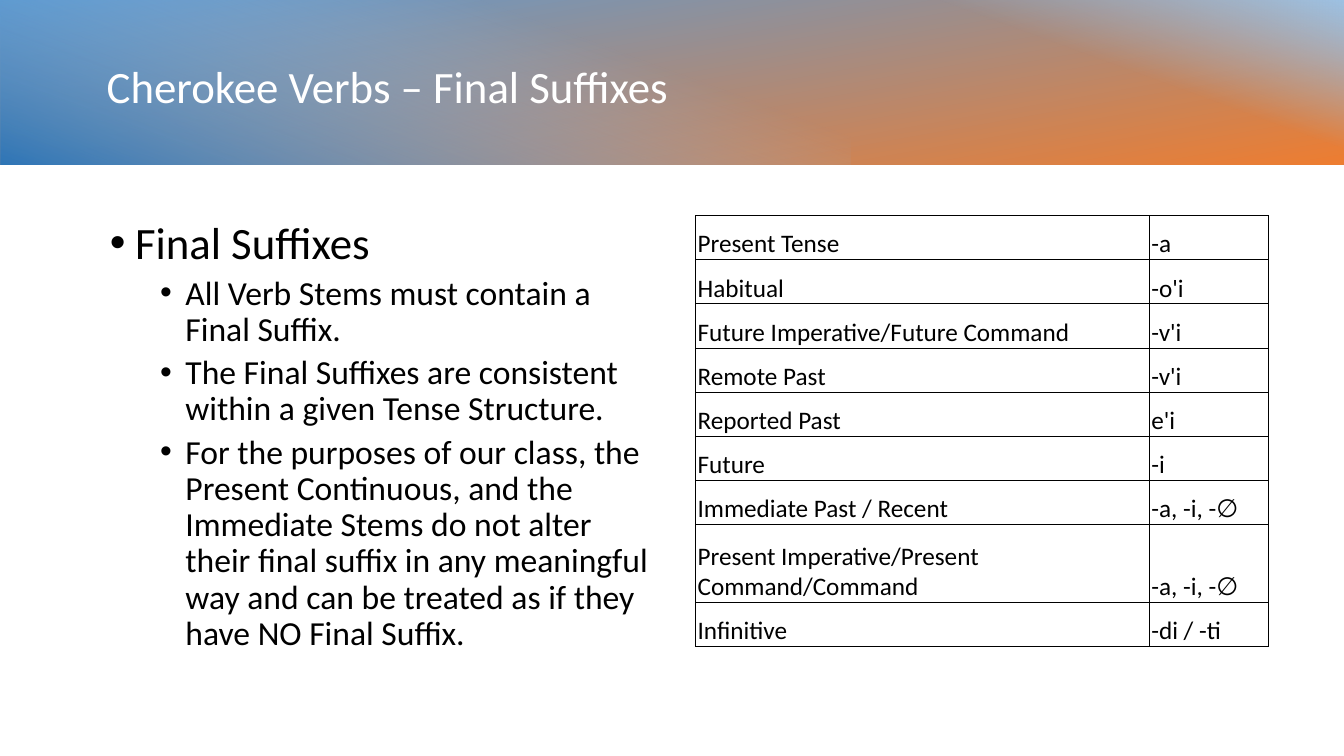
from dataclasses import dataclass

from lxml.etree import SubElement as Sub
from pptx import Presentation
from pptx.dml.color import RGBColor as RGB
from pptx.enum.shapes import MSO_SHAPE as SHAPE
from pptx.enum.text import MSO_ANCHOR as ANCHOR
from pptx.oxml.ns import qn
from pptx.util import Inches, Pt


@dataclass(frozen=True)
class Theme:
    font: str = "Calibri"
    blue: str = "5B9BD5"
    orange: str = "ED7D31"
    light: str = "9DC3E6"
    dark: str = "2E75B6"
    white: str = "FFFFFF"
    black: str = "000000"
    head: int = 32
    body: int = 24
    cell: int = 18
    rule: float = 0.5


class Deck:
    """Places elements on a grid of 100 columns by 100 rows."""

    def __init__(self, theme):
        self.theme = theme
        self.prs = Presentation()
        self.prs.slide_width = Inches(13.33)
        self.prs.slide_height = Inches(7.5)
        self.slide = self.prs.slides.add_slide(self.prs.slide_layouts[6])

    def col(self, n):
        return int(self.prs.slide_width * n / 100)

    def row(self, n):
        return int(self.prs.slide_height * n / 100)

    def area(self, left, top, wide, high):
        return self.col(left), self.row(top), self.col(wide), self.row(high)

    def style(self, para, size, color):
        for run in para.runs:
            run.font.name = self.theme.font
            run.font.size = Pt(size)
            run.font.color.rgb = RGB.from_string(color)

    def band(self, box, turn, angle, stops):
        """Turned rectangle that covers box; stops are (percent, color, alpha)."""
        x, y, w, h = self.area(*box)
        shape = self.slide.shapes.add_shape(
            SHAPE.RECTANGLE, x + (w - h) // 2, y + (h - w) // 2, h, w)
        shape.rotation = turn
        shape.shadow.inherit = False
        shape.line.fill.background()
        shape.fill.gradient()
        grad = shape.fill._xPr.find(qn("a:gradFill"))
        for child in list(grad):
            grad.remove(child)
        grad.set("rotWithShape", "1")
        group = Sub(grad, qn("a:gsLst"))
        for place, color, alpha in stops:
            stop = Sub(group, qn("a:gs"), pos=str(place * 1000))
            tint = Sub(stop, qn("a:srgbClr"), val=color)
            if alpha < 100:
                Sub(tint, qn("a:alpha"), val=str(alpha * 1000))
        Sub(grad, qn("a:lin"), ang=str(angle * 60000), scaled="0")

    def text(self, box, lines, color, anchor=ANCHOR.TOP):
        """Lines are (words, size, bullet indent in inches or None)."""
        frame = self.slide.shapes.add_textbox(*self.area(*box)).text_frame
        frame.word_wrap = True
        frame.vertical_anchor = anchor
        frame.text = "\n".join(line[0] for line in lines)
        for para, (_, size, indent) in zip(frame.paragraphs, lines):
            para.line_spacing = 0.9
            self.style(para, size, color)
            if indent is not None:
                para.space_before = Pt(5)
                props = para._p.get_or_add_pPr()
                props.set("marL", str(Inches(indent)))
                props.set("indent", str(Inches(-0.25)))
                Sub(props, qn("a:buFont"), typeface="Arial")
                Sub(props, qn("a:buChar"), char="•")

    def border(self, cell):
        props = cell._tc.get_or_add_tcPr()
        for spot, side in enumerate(("lnL", "lnR", "lnT", "lnB")):
            line = props.makeelement(
                qn("a:" + side), {"w": str(Pt(self.theme.rule))})
            props.insert(spot, line)
            fill = Sub(line, qn("a:solidFill"))
            Sub(fill, qn("a:srgbClr"), val=self.theme.black)

    def table(self, left, top, cols, rows, data):
        box = self.area(left, top, sum(cols), sum(rows))
        grid = self.slide.shapes.add_table(len(rows), len(cols), *box).table
        grid.first_row = grid.horz_banding = False
        for column, size in zip(grid.columns, cols):
            column.width = self.col(size)
        for line, size, words in zip(grid.rows, rows, data):
            line.height = self.row(size)
            for cell, word in zip(line.cells, words):
                cell.fill.background()
                cell.vertical_anchor = ANCHOR.BOTTOM
                cell.margin_left = cell.margin_right = Inches(0.02)
                cell.margin_top, cell.margin_bottom = Inches(0.02), 0
                cell.text_frame.text = word
                self.style(cell.text_frame.paragraphs[0],
                           self.theme.cell, self.theme.black)
                self.border(cell)

    def save(self):
        self.prs.save("out.pptx")


def main():
    look = Theme()
    deck = Deck(look)

    # Header band: base blend, light right corner, dark left corner
    top, high = -0.4, 22.1
    deck.band((0, top, 100, high), 270, 170,
              [(0, look.blue, 100), (100, look.orange, 100)])
    deck.band((58.5, top, 41.5, high), 270, 20,
              [(59, look.light, 0), (100, look.light, 100)])
    deck.band((0, top, 63.3, high), 90, 20,
              [(29, look.light, 0), (100, look.dark, 100)])

    # Title
    deck.text((7.2, 4.4, 86, 14.67),
              [("Cherokee Verbs – Final Suffixes", look.head, None)],
              look.white, ANCHOR.MIDDLE)

    # Bullets
    notes = [
        "All Verb Stems must contain a Final Suffix.",
        "The Final Suffixes are consistent within a given Tense Structure.",
        "For the purposes of our class, the Present Continuous, and the "
        "Immediate Stems do not alter their final suffix in any meaningful "
        "way and can be treated as if they have NO Final Suffix.",
    ]
    deck.text((3.68, 28.53, 46.36, 61.6),
              [("Final Suffixes", look.head, 0.75)]
              + [(note, look.body, 1.25) for note in notes], look.black)

    # Suffix table; the long name takes a taller row
    data = [
        ("Present Tense", "-a"),
        ("Habitual", "-o'i"),
        ("Future Imperative/Future Command", "-v'i"),
        ("Remote Past", "-v'i"),
        ("Reported Past", "e'i"),
        ("Future", "-i"),
        ("Immediate Past / Recent", "-a, -i, -∅"),
        ("Present Imperative/Present Command/Command", "-a, -i, -∅"),
        ("Infinitive", "-di / -ti"),
    ]
    rows = [10.4 if len(name) > 40 else 5.83 for name, _ in data]
    deck.table(51.76, 28.53, (33.76, 8.85), rows, data)

    deck.save()


if __name__ == "__main__":
    main()
